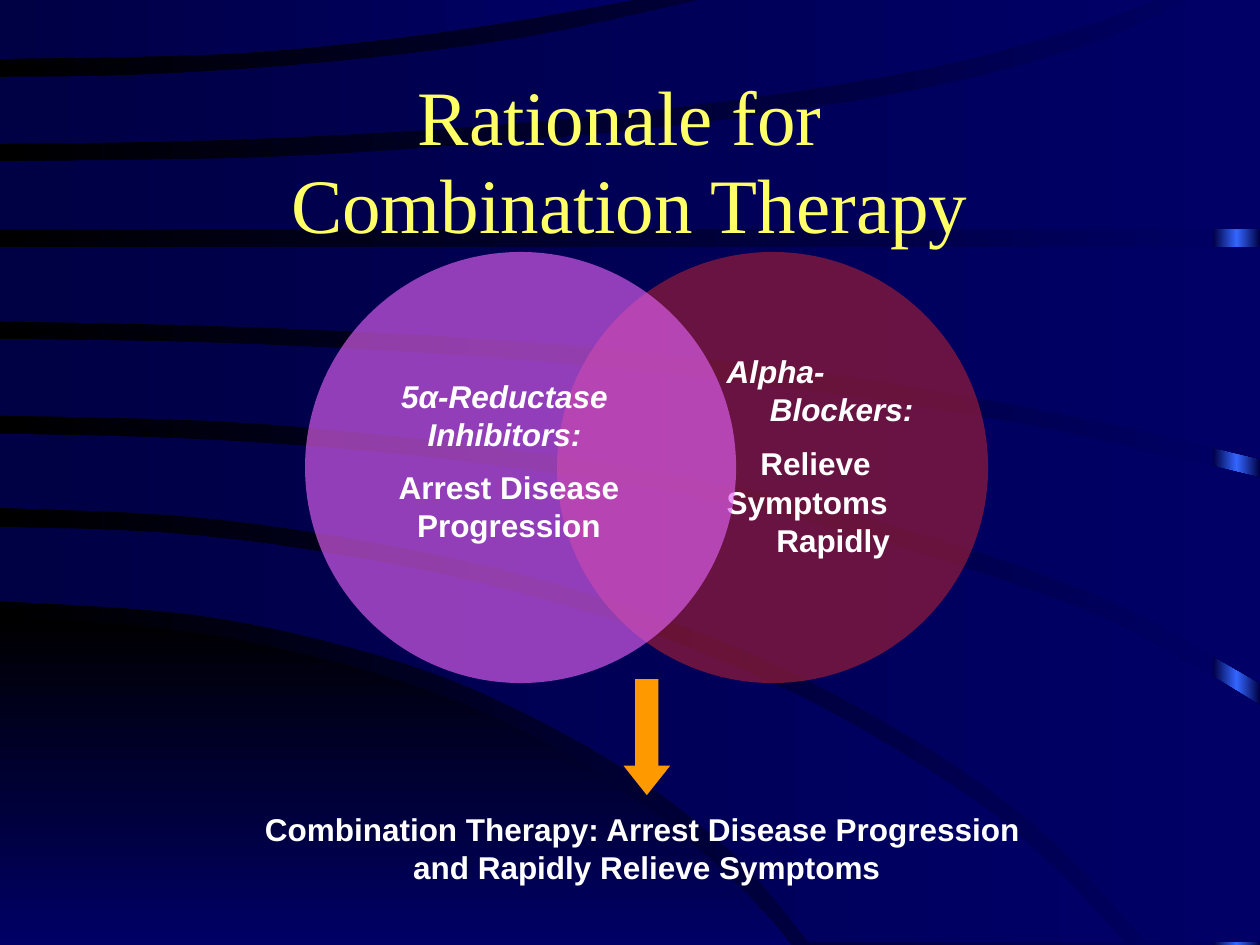
from copy import deepcopy

from lxml.etree import SubElement
from pptx import Presentation
from pptx.dml.color import RGBColor
from pptx.enum.shapes import MSO_SHAPE
from pptx.enum.text import MSO_ANCHOR, PP_ALIGN
from pptx.oxml.ns import qn
from pptx.util import Cm, Pt

WIDTH, HEIGHT = 25.4, 19.05
CURVE_STEPS = 4
COLORS = {
    "black": "000000", "navy": "000066", "dark": "000044", "glow": "3366FF",
    "red": "A01E36", "violet": "E160F2", "orange": "FF9900",
    "white": "FFFFFF", "yellow": "FFFF66",
}
BODY = {"name": "Arial", "size": Pt(18), "bold": True, "color": "white"}
ITALIC = {**BODY, "italic": True}
HEADING = {"name": "Times New Roman", "size": Pt(44), "color": "yellow"}

FLOOR = {
    "upper": [(0, 12.47), (2.84, 12.62), (5.54, 13.06), (8.31, 13.82), (10.8, 14.88),
              (13.41, 16.54), (15.14, 18.11), (15.95, 19.05)],
    "lower": [(0, 19.05)],
}
BANDS = [
    {"upper": [(0, 10.62), (3.3, 10.74), (6.32, 11.1), (9.7, 11.76), (13.08, 12.75),
               (16.36, 14.15), (19.46, 16), (21.16, 17.4), (22.68, 19)],
     "lower": [(0, 12.12), (3.76, 12.37), (6.81, 12.98), (9.55, 13.89), (12.5, 15.44),
               (14.78, 17.2), (16.31, 19)]},
    {"upper": [(0, 8.74), (3.66, 8.84), (7.34, 9.09), (10.82, 9.5), (14.48, 10.11),
               (17.6, 10.87), (20.78, 11.89), (22.96, 12.78), (25.4, 14.22)],
     "corner": [(25.4, 19)],
     "lower": [(0, 10.24), (3.56, 10.39), (6.78, 10.8), (10.29, 11.51), (13.23, 12.42),
               (16.15, 13.64), (19.2, 15.39), (21.29, 17.02), (23.09, 19)]},
    {"upper": [(0, 6.83), (4.27, 6.91), (8.86, 7.14), (13.28, 7.52), (18.14, 8.13),
               (21.82, 8.79), (25.4, 9.63)],
     "lower": [(0, 8.38), (4.24, 8.48), (7.7, 8.76), (11.73, 9.25), (15.49, 9.96),
               (18.87, 10.85), (22.38, 12.12), (25.4, 13.77)]},
    {"upper": [(0, 4.98), (25.4, 4.98)],
     "lower": [(0, 6.48), (4.72, 6.58), (9.88, 6.83), (14.02, 7.21), (17.83, 7.7),
               (21.97, 8.46), (25.4, 9.25)]},
    {"upper": [(0, 3.25), (5.16, 3.18), (9.45, 2.92), (14.07, 2.49), (18.64, 1.78),
               (21.89, 0.91), (23.95, 0)],
     "corner": [(25.4, 0)],
     "lower": [(0, 4.62), (25.4, 4.62)]},
    {"upper": [(0, 1.55), (3.07, 1.5), (6.78, 1.24), (10.57, 0.76), (14.12, 0)],
     "lower": [(0, 2.9), (4.5, 2.82), (9.68, 2.54), (14.66, 2.03), (18.82, 1.35),
               (21.69, 0.58), (23.29, 0)]},
    {"upper": [(0, 0), (12.73, 0)],
     "lower": [(0, 1.19), (4.39, 1.09), (7.34, 0.84), (10.13, 0.46), (12.73, 0)]},
]

CIRCLE_TOP, CIRCLE_SIZE = 5.08, 8.69
CIRCLES = [
    {"left": 11.23, "color": "red", "box": (14.4, 6.98, 4.29, 4.5), "align": PP_ALIGN.LEFT,
     "lines": [("Alpha-", ITALIC, 0, 0), ("Blockers:", ITALIC, 0, 0.87),
               ("Relieve", BODY, 9, 0.68), ("Symptoms", BODY, 1, 0),
               ("Rapidly", BODY, 0, 1)]},
    {"left": 6.15, "color": "violet", "box": (7.62, 7.47, 5.28, 3.68), "align": PP_ALIGN.CENTER,
     "lines": [("5α-Reductase \vInhibitors: ", ITALIC, 0, 0),
               ("Arrest Disease Progression", BODY, 9, 0)]},
]
ARROW = (12.57, 13.69, 0.94, 2.34)
CONCLUSION = "Combination Therapy: Arrest Disease Progression \vand Rapidly Relieve Symptoms"
TITLE = "Rationale for \vCombination Therapy"


def rgb(name):
    return RGBColor.from_string(COLORS[name])


def set_gradient(fill, names, angle=0):
    fill.gradient()
    fill.gradient_angle = angle
    stops = fill.gradient_stops
    if len(names) == 3:
        last = stops[1]._gs
        last.addprevious(deepcopy(last))
        stops = fill.gradient_stops
    for index, (stop, name) in enumerate(zip(stops, names)):
        stop.position = index / (len(names) - 1)
        stop.color.rgb = rgb(name)


def smooth_curve(points):
    if len(points) < 3:
        return points
    padded = [points[0], *points, points[-1]]
    curve = []
    for a, b, c, d in zip(padded, padded[1:], padded[2:], padded[3:]):
        for step in range(CURVE_STEPS):
            t = step / CURVE_STEPS
            curve.append(tuple(
                q + t * (r - p) / 2 + t**2 * (2 * p - 5 * q + 4 * r - s) / 2
                + t**3 * (3 * q - p - 3 * r + s) / 2
                for p, q, r, s in zip(a, b, c, d)))
    return curve + [points[-1]]


def clean(shape):
    shape.shadow.inherit = False
    shape.line.fill.background()
    return shape


def add_band(slide, band, colors, angle=0):
    outline = (smooth_curve(band["upper"]) + band.get("corner", [])
               + smooth_curve(band["lower"])[::-1])
    points = [(Cm(x), Cm(y)) for x, y in outline]
    builder = slide.shapes.build_freeform(*points[0])
    builder.add_line_segments(points[1:], close=True)
    set_gradient(clean(builder.convert_to_shape()).fill, colors, angle)


def add_shape(slide, kind, place, color=None, opacity=100):
    shape = clean(slide.shapes.add_shape(kind, *map(Cm, place)))
    if color:
        shape.fill.solid()
        shape.fill.fore_color.rgb = rgb(color)
    if opacity < 100:
        hue = shape.fill._xPr.find(qn("a:solidFill"))[0]
        SubElement(hue, qn("a:alpha"), val=str(opacity * 1000))
    return shape


def add_text(slide, place, lines, align=PP_ALIGN.CENTER, anchor=MSO_ANCHOR.TOP, spacing=None):
    frame = slide.shapes.add_textbox(*map(Cm, place)).text_frame
    frame.word_wrap = True
    frame.vertical_anchor = anchor
    for index, (text, style, before, indent) in enumerate(lines):
        paragraph = frame.add_paragraph() if index else frame.paragraphs[0]
        paragraph.text = text
        formats = {"alignment": align, "space_before": Pt(before), "line_spacing": spacing}
        for name, value in formats.items():
            setattr(paragraph, name, value)
        if indent:
            paragraph._p.get_or_add_pPr().set("marL", str(Cm(indent)))
        for run in paragraph.runs:
            for name, value in style.items():
                if name == "color":
                    run.font.color.rgb = rgb(value)
                else:
                    setattr(run.font, name, value)


def main():
    presentation = Presentation()
    presentation.slide_width, presentation.slide_height = Cm(WIDTH), Cm(HEIGHT)
    slide = presentation.slides.add_slide(presentation.slide_layouts[6])
    set_gradient(slide.background.fill, ["black", "navy"])

    strip = add_shape(slide, MSO_SHAPE.RECTANGLE, (24.46, 0, 0.94, HEIGHT))
    set_gradient(strip.fill, ["dark", "glow", "dark"])
    add_band(slide, FLOOR, ["black", "navy"], angle=270)
    for band in BANDS:
        add_band(slide, band, ["dark", "navy"])

    for circle in CIRCLES:
        place = (circle["left"], CIRCLE_TOP, CIRCLE_SIZE, CIRCLE_SIZE)
        add_shape(slide, MSO_SHAPE.OVAL, place, circle["color"], opacity=65)
        add_text(slide, circle["box"], circle["lines"], circle["align"])

    arrow = add_shape(slide, MSO_SHAPE.DOWN_ARROW, ARROW, "orange")
    arrow.adjustments[1] = 0.63
    add_text(slide, (4.01, 16.21, 18.06, 1.78), [(CONCLUSION, BODY, 0, 0)])
    add_text(slide, (1.9, 1.7, 21.59, 3.18), [(TITLE, HEADING, 0, 0)],
             anchor=MSO_ANCHOR.MIDDLE, spacing=0.95)
    presentation.save("out.pptx")


if __name__ == "__main__":
    main()
